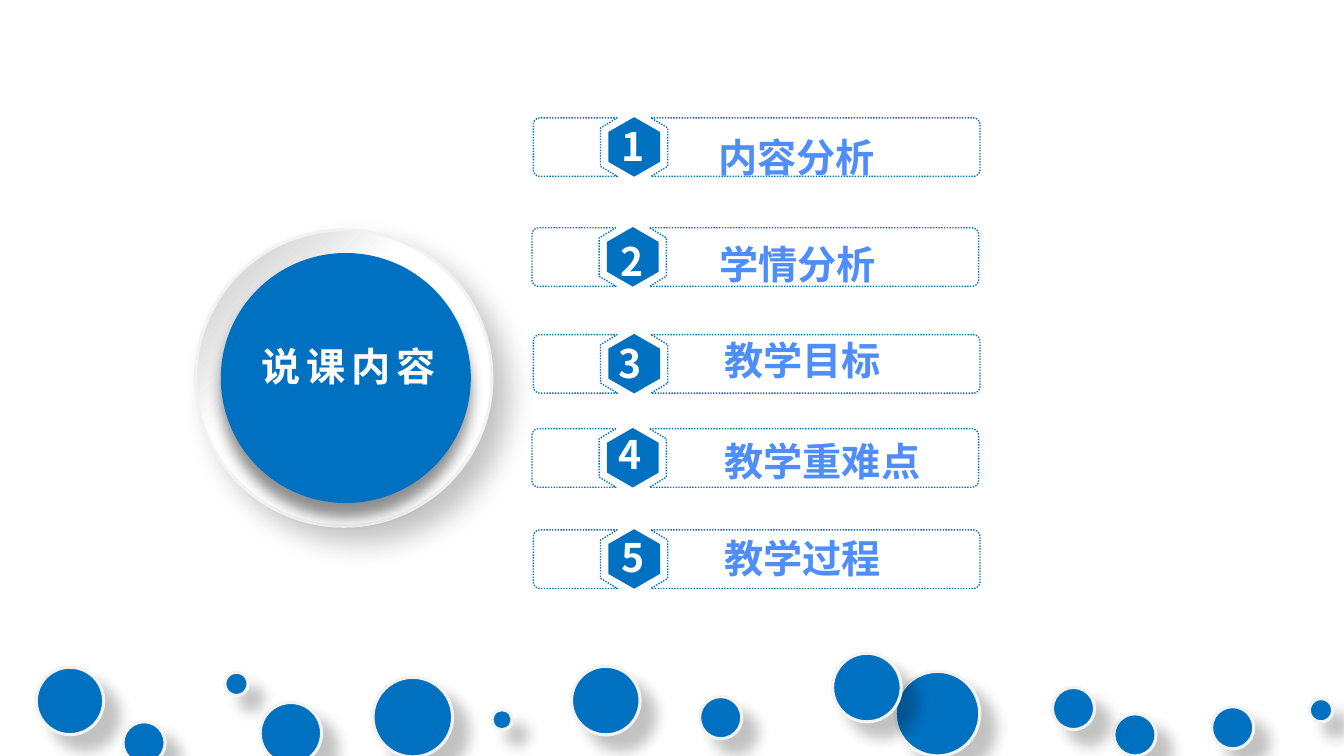
from copy import deepcopy
from dataclasses import dataclass
from math import cos, radians, sin

from lxml import etree
from pptx import Presentation
from pptx.dml.color import RGBColor
from pptx.enum.dml import MSO_LINE_DASH_STYLE as DASH
from pptx.enum.shapes import MSO_SHAPE as SHAPE
from pptx.enum.text import MSO_ANCHOR as ANCHOR
from pptx.oxml.ns import qn
from pptx.util import Pt

BLUE = RGBColor(0x00, 0x70, 0xC0)
LABEL_BLUE = RGBColor(0x4F, 0x8E, 0xFA)
RIM = RGBColor(0xF2, 0xF2, 0xF2)
SILVER = RGBColor(0xBF, 0xBF, 0xBF)
WHITE = RGBColor(0xFF, 0xFF, 0xFF)
CJK_FONT = "Noto Sans CJK SC"

# Agenda frame, measured from its top-left corner
FRAME_W, FRAME_H, CORNER = 319, 41.8, 4.8
HEX_X, HEX_HALF_W, HEX_H = 72, 18.5, 42.5
GAP_OUTER, GAP_INNER, NOTCH = 12, 24, 7.2
TEXT_H = 41


@dataclass
class Shadow:
    alpha: int
    blur: float
    dist: float
    angle: int


@dataclass
class Bubble:
    x: float
    y: float
    size: float


@dataclass
class AgendaRow:
    label: str
    left: float
    top: float
    number_x: float
    number_y: float
    label_x: float
    label_y: float


BUBBLE_SHADOW = Shadow(23, 10, 15, 45)
RING_SHADOW = Shadow(23, 20, 15, 45)
DISC_SHADOW = Shadow(43, 10, 10, 90)

BUBBLES = [
    Bubble(185.8, 501.8, 43.9), Bubble(408.2, 475.9, 49),
    Bubble(639.4, 479.5, 60.5), Bubble(499.7, 497.5, 30.2),
    Bubble(25.9, 476.6, 48.2), Bubble(266.4, 483.8, 56.9),
    Bubble(594.7, 466.6, 49), Bubble(160.6, 480.2, 16.6),
    Bubble(87.8, 515.5, 30.2), Bubble(795.6, 509.8, 30.2),
    Bubble(351.4, 506.9, 14.4), Bubble(935.3, 499, 16.6),
    Bubble(751.7, 491, 30.2), Bubble(865.4, 504.7, 30.2),
]

ROWS = [
    AgendaRow("内容分析", 381, 84.2, 437, 83.5, 506.2, 91.4),
    AgendaRow("学情分析", 380, 162.7, 436.3, 165.6, 506.9, 168),
    AgendaRow("教学目标", 381, 239, 434.9, 239, 510.5, 236.2),
    AgendaRow("教学重难点", 380, 306.2, 434.9, 303.8, 510.5, 308.9),
    AgendaRow("教学过程", 381, 378.5, 437, 377.3, 510.5, 378),
]


def add_shadow(effects, shadow: Shadow) -> None:
    outer = etree.SubElement(
        effects, qn("a:outerShdw"), blurRad=str(Pt(shadow.blur)),
        dist=str(Pt(shadow.dist)), dir=str(shadow.angle * 60000),
        algn="ctr", rotWithShape="0")
    color = etree.SubElement(outer, qn("a:srgbClr"), val="000000")
    etree.SubElement(color, qn("a:alpha"), val=str(shadow.alpha * 1000))


def add_circle(shapes, x: float, y: float, size: float, shadow: Shadow, rim: bool = True):
    sp = shapes.add_shape(SHAPE.OVAL, Pt(x), Pt(y), Pt(size), Pt(size))
    sp.fill.solid()
    sp.fill.fore_color.rgb = BLUE
    if rim:
        sp.line.color.rgb = RIM
        sp.line.width = Pt(2.25)
    else:
        sp.line.fill.background()
    sp.shadow.inherit = False
    add_shadow(sp._element.spPr.find(qn("a:effectLst")), shadow)
    return sp


def add_text(shapes, text: str, x: float, y: float, width: float, color: RGBColor, font: str = CJK_FONT):
    box = shapes.add_textbox(Pt(x), Pt(y), Pt(width), Pt(TEXT_H))
    tf = box.text_frame
    tf.word_wrap = True
    tf.vertical_anchor = ANCHOR.MIDDLE
    p = tf.paragraphs[0]
    r = p.add_run()
    r.text = text
    p.font.size, p.font.bold = Pt(28), True
    p.font.name, p.font.color.rgb = font, color
    # East Asian typeface, and the run properties for spacing and effects
    rpr = r._r.get_or_add_rPr()
    etree.SubElement(rpr, qn("a:ea"), typeface=CJK_FONT)
    return rpr


def add_outline(shapes, left: float, top: float, contours: list[list[tuple[float, float]]]):
    builder = None
    for contour in contours:
        points = [(Pt(left + x), Pt(top + y)) for x, y in contour]
        if builder is None:
            builder = shapes.build_freeform(*points[0])
        else:
            builder.move_to(*points[0])
        builder.add_line_segments(points[1:], close=True)
    sp = builder.convert_to_shape()
    sp.shadow.inherit = False
    return sp


def end_piece(edge: float, side: int) -> list[tuple[float, float]]:
    """Rounded end of the frame; side is -1 for left, 1 for right."""
    outer, inner = HEX_X + side * GAP_OUTER, HEX_X + side * GAP_INNER
    center = edge - side * CORNER
    arc = [(CORNER * cos(radians(a)), CORNER * sin(radians(a))) for a in range(0, 91, 15)]
    upper = [(center + side * dx, CORNER - dy) for dx, dy in reversed(arc)]
    lower = [(center + side * dx, FRAME_H - CORNER + dy) for dx, dy in arc]
    return [(outer, 0), *upper, *lower, (outer, FRAME_H),
            (inner, FRAME_H - NOTCH), (inner, NOTCH)]


def add_row(shapes, number: int, row: AgendaRow) -> None:
    group = shapes.add_group_shape().shapes
    frame = add_outline(group, row.left, row.top, [end_piece(0, -1), end_piece(FRAME_W, 1)])
    frame.fill.background()
    frame.line.color.rgb = BLUE
    frame.line.width = Pt(1)
    frame.line.dash_style = DASH.ROUND_DOT

    w, h = HEX_HALF_W, HEX_H
    hexagon = add_outline(group, row.left + HEX_X, row.top - 0.5, [
        [(0, 0), (w, h / 4), (w, h * 3 / 4), (0, h), (-w, h * 3 / 4), (-w, h / 4)]])
    hexagon.fill.solid()
    hexagon.fill.fore_color.rgb = BLUE
    hexagon.line.fill.background()

    add_text(group, str(number), row.number_x, row.number_y, 44, WHITE)
    add_text(shapes, row.label, row.label_x, row.label_y, 175, LABEL_BLUE)


def main() -> None:
    prs = Presentation()
    prs.slide_width, prs.slide_height = Pt(960), Pt(540)
    shapes = prs.slides.add_slide(prs.slide_layouts[6]).shapes

    # Bubbles along the bottom
    for bubble in BUBBLES:
        add_circle(shapes, bubble.x, bubble.y, bubble.size, BUBBLE_SHADOW)

    # Title ring with its shaded rim
    ring = add_circle(shapes, 139.7, 164.2, 211.7, RING_SHADOW)
    ring.fill.gradient()
    ring.fill.gradient_angle = 315
    stops = ring.fill.gradient_stops
    stops[0].color.rgb, stops[0].position = SILVER, 0
    stops[1].color.rgb, stops[1].position = WHITE, 0.37
    stop_list = ring._element.spPr.find(".//" + qn("a:gsLst"))
    stop_list.append(deepcopy(stop_list[-1]))
    ring.fill.gradient_stops[2].position = 1

    # Title disc and title
    add_circle(shapes, 157.7, 180.7, 178.6, DISC_SHADOW, rim=False)
    rpr = add_text(shapes, "说课内容", 180, 240.5, 150, WHITE, "Arial")
    rpr.set("spc", "400")
    effects = etree.Element(qn("a:effectLst"))
    rpr.insert(0, effects)
    add_shadow(effects, DISC_SHADOW)

    # Agenda
    for number, row in enumerate(ROWS, 1):
        add_row(shapes, number, row)

    prs.save("out.pptx")


if __name__ == "__main__":
    main()
